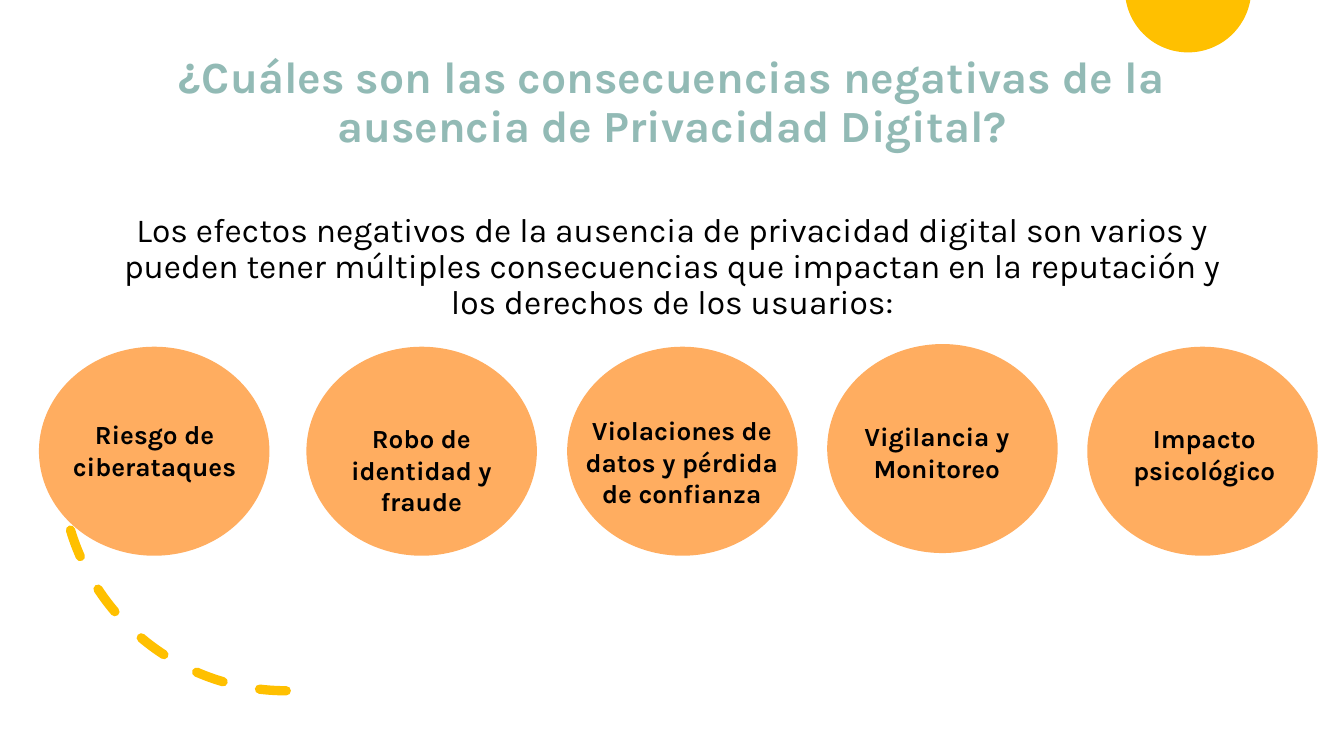
import math
from pptx import Presentation, util as u
from pptx.dml.color import RGBColor
from pptx.enum import dml, shapes, text

FONT = "Karla"
GOLD, PEACH, TEAL, BLACK = "FFC000", "FFAD60", "92BAB5", "000000"


def color(code):
    return RGBColor.from_string(code)


class Page:
    def __init__(self, slide):
        self.slide = slide

    def style(self, para, size, code, bold):
        para.alignment = text.PP_ALIGN.CENTER
        for run in para.runs:
            font = run.font
            font.name, font.size, font.bold = FONT, u.Pt(size), bold
            font.color.rgb = color(code)

    def paint(self, shape, code):
        shape.shadow.inherit = False
        shape.fill.solid()
        shape.fill.fore_color.rgb = color(code)
        shape.line.fill.background()

    def title(self, box, head, body):
        shape = self.slide.shapes.title
        shape.left, shape.top, shape.width, shape.height = map(u.Inches, box)
        frame = shape.text_frame
        frame.word_wrap = True
        frame.auto_size = text.MSO_AUTO_SIZE.NONE
        frame.vertical_anchor = text.MSO_ANCHOR.MIDDLE
        frame.text = head
        first, second = frame.paragraphs[0], frame.add_paragraph()
        second.text = body
        self.style(first, 47.7, TEAL, True)
        self.style(second, 36, BLACK, False)
        first.line_spacing = second.line_spacing = 0.9
        first.space_after = u.Pt(66)

    def sun(self, mid, drop, radius):
        start = math.asin(drop / radius)
        count = 60
        step = (math.pi - 2 * start) / count
        turns = [start + step * i for i in range(count + 1)]
        points = [
            (u.Inches(mid + radius * math.cos(a)), u.Inches(radius * math.sin(a) - drop))
            for a in turns
        ]
        build = self.slide.shapes.build_freeform(*points[0])
        build.add_line_segments(points[1:], close=True)
        self.paint(build.convert_to_shape(), GOLD)

    def arc(self, left, top, size):
        shape = self.slide.shapes.add_shape(
            shapes.MSO_SHAPE.ARC, *map(u.Inches, (left, top, size, size)))
        shape.shadow.inherit = False
        shape.fill.background()
        shape.rotation = 90
        shape._element.spPr.get_or_add_xfrm().set("flipV", "1")
        line = shape.line
        line.color.rgb = color(GOLD)
        line.width = u.Pt(10)
        line.dash_style = dml.MSO_LINE.DASH
        line._get_or_add_ln().set("cap", "rnd")

    def bubble(self, left, top, label, box):
        group = self.slide.shapes.add_group_shape()
        oval = group.shapes.add_shape(
            shapes.MSO_SHAPE.OVAL, *map(u.Inches, (left, top, 3.43, 3.11)))
        self.paint(oval, PEACH)
        frame = group.shapes.add_textbox(*map(u.Inches, box)).text_frame
        frame.word_wrap = True
        frame.margin_left = frame.margin_right = 0
        frame.margin_top = frame.margin_bottom = 0
        frame.text = label
        para = frame.paragraphs[0]
        para.line_spacing = u.Pt(33.6)
        self.style(para, 28, BLACK, True)


def main():
    deck = Presentation()
    deck.slide_width, deck.slide_height = u.Inches(20), u.Inches(11.25)
    page = Page(deck.slides.add_slide(deck.slide_layouts[5]))
    page.sun(17.68, 0.16, 0.94)
    page.title(
        (1.38, 0.78, 17.25, 4.06),
        "¿Cuáles son las consecuencias negativas de la ausencia de Privacidad Digital?",
        "Los efectos negativos de la ausencia de privacidad digital son varios y "
        "pueden tener múltiples consecuencias que impactan en la reputación y "
        "los derechos de los usuarios:",
    )
    page.arc(0.91, 3.58, 6.7)
    risks = [
        (0.58, 5.16, "Riesgo de ciberataques", (1.07, 6.23, 2.46, 0.94)),
        (4.56, 5.16, "Robo de identidad y fraude", (4.8, 6.29, 2.94, 0.94)),
        (8.44, 5.16, "Violaciones de datos y pérdida de confianza", (8.54, 6.17, 3.21, 1.42)),
        (12.31, 5.12, "Vigilancia y Monitoreo", (12.55, 6.26, 2.78, 0.94)),
        (16.18, 5.16, "Impacto psicológico", (16.53, 6.29, 2.78, 0.94)),
    ]
    for risk in risks:
        page.bubble(*risk)
    deck.save("out.pptx")


if __name__ == "__main__":
    main()
